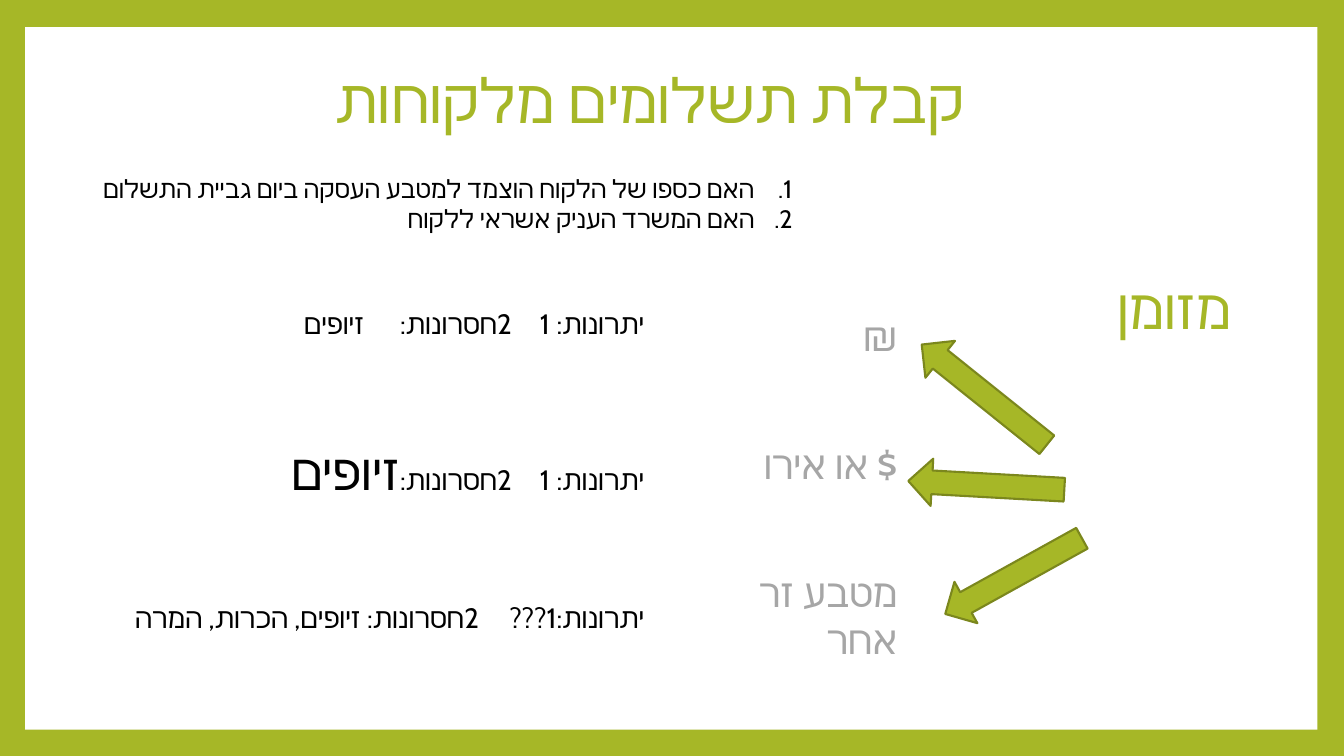
from lxml import etree
from pptx import Presentation
from pptx.dml.color import RGBColor
from pptx.enum.shapes import MSO_SHAPE
from pptx.enum.text import MSO_ANCHOR, PP_ALIGN
from pptx.oxml.ns import qn
from pptx.util import Pt

RECTANGLE, LEFT_ARROW = MSO_SHAPE.RECTANGLE, MSO_SHAPE.LEFT_ARROW
TOP, MIDDLE = MSO_ANCHOR.TOP, MSO_ANCHOR.MIDDLE
LEFT, RIGHT = PP_ALIGN.LEFT, PP_ALIGN.RIGHT

FONT = "Cabin"
GREEN, DARK_GREEN, GREY, BLACK, WHITE = "A6B727", "7B871D", "A6A6A6", "000000", "FFFFFF"

QUESTIONS = [
    "האם כספו של הלקוח הוצמד למטבע העסקה ביום גביית התשלום",
    "האם המשרד העניק אשראי ללקוח",
]
CURRENCIES = ["₪", "$ או אירו", "מטבע זר אחר"]
COMPARISONS = [
    (["יתרונות:\t1\t2\tחסרונות:\tזיופים"], [74.5, 105, 151.5, 243]),
    (["יתרונות:\t1\t2\tחסרונות:\t", "זיופים"], [74.5, 105, 146.5, 227]),
    (["יתרונות:\t1???\t2\tחסרונות: זיופים, הכרות, המרה"], [74.5, 128.5, 155]),
]
ARROWS = [
    (645.8, 265, 114.5, 38.7),
    (648.7, 329.8, 111.6, 3.2),
    (668.2, 394.6, 111.6, 331),
]


def color(value):
    """Turn a hex string into a colour."""
    return RGBColor.from_string(value)


def add_block(slide, left, top, width, height, shape_type, fill, line=None, rotation=0):
    """Add a flat preset shape, outlined if a line colour is given."""
    shape = slide.shapes.add_shape(shape_type, Pt(left), Pt(top), Pt(width), Pt(height))
    shape.shadow.inherit = False
    shape.rotation = rotation
    shape.fill.solid()
    shape.fill.fore_color.rgb = color(fill)
    if line:
        shape.line.color.rgb = color(line)
        shape.line.width = Pt(1.5)
    else:
        shape.line.fill.background()


def add_text(slide, left, top, width, height, rows, size, fill,
             anchor=TOP, align=RIGHT, gap=0, line_spacing=1.0):
    """Add right-to-left paragraphs, each a list of spans, and return them."""
    box = slide.shapes.add_textbox(Pt(left), Pt(top), Pt(width), Pt(height))
    frame = box.text_frame
    frame.word_wrap = True
    frame.vertical_anchor = anchor
    for index, spans in enumerate(rows):
        para = frame.add_paragraph() if index else frame.paragraphs[0]
        para.alignment = align
        para.line_spacing = line_spacing
        para.space_before = Pt(gap if index else 0)
        para.font.size = Pt(size)
        para.font.name = FONT
        para.font.color.rgb = color(fill)
        properties = para._p.get_or_add_pPr()
        properties.set("rtl", "1")
        etree.SubElement(properties.find(qn("a:defRPr")), qn("a:cs"), typeface=FONT)
        for text in spans:
            para.add_run().text = text
    return frame.paragraphs


def insert_property(para, tag):
    """Insert a paragraph property ahead of the default font."""
    element = etree.Element(qn(tag))
    para._p.pPr.find(qn("a:defRPr")).addprevious(element)
    return element


def number_paragraph(para, indent):
    """Number a paragraph with a hanging indent."""
    para._p.pPr.set("marL", str(Pt(indent)))
    para._p.pPr.set("indent", str(-Pt(indent)))
    insert_property(para, "a:buAutoNum").set("type", "arabicPeriod")


def set_tabs(para, stops):
    """Set tab stops measured from the start of the line."""
    tabs = insert_property(para, "a:tabLst")
    for stop in stops:
        etree.SubElement(tabs, qn("a:tab"), pos=str(Pt(stop)), algn="l")


def main():
    """Build the slide about payments from customers."""
    deck = Presentation()
    deck.slide_width, deck.slide_height = Pt(960), Pt(540)
    slide = deck.slides.add_slide(deck.slide_layouts[6])
    slide.background.fill.solid()
    slide.background.fill.fore_color.rgb = color(GREEN)
    add_block(slide, 18, 19.4, 923, 501.8, RECTANGLE, WHITE)

    add_text(slide, 232.6, 14.4, 671.8, 118.8, [["קבלת תשלומים מלקוחות"]], 44, GREEN,
             anchor=MIDDLE, align=LEFT, line_spacing=0.9)
    add_text(slide, 727.2, 197.3, 159.1, 284.4, [["מזומן"]], 40, GREEN, line_spacing=0.9)
    add_text(slide, 488.9, 205.9, 159.1, 284.4, [[name] for name in CURRENCIES], 28, GREY,
             anchor=MIDDLE, gap=57.6)

    rows = [spans for spans, _ in COMPARISONS]
    comparisons = add_text(slide, 41, 215.3, 426.2, 244.8, rows, 20, BLACK, gap=71.5)
    for para, (_, stops) in zip(comparisons, COMPARISONS):
        set_tabs(para, stops)
    comparisons[1].runs[1].font.size = Pt(36)

    for left, top, width, rotation in ARROWS:
        add_block(slide, left, top, width, 33.8, LEFT_ARROW, GREEN, DARK_GREEN, rotation)

    questions = add_text(slide, 56.2, 120.2, 517, 72.7, [[text] for text in QUESTIONS], 18, BLACK)
    for para in questions:
        number_paragraph(para, 27)

    deck.save("out.pptx")


if __name__ == "__main__":
    main()
